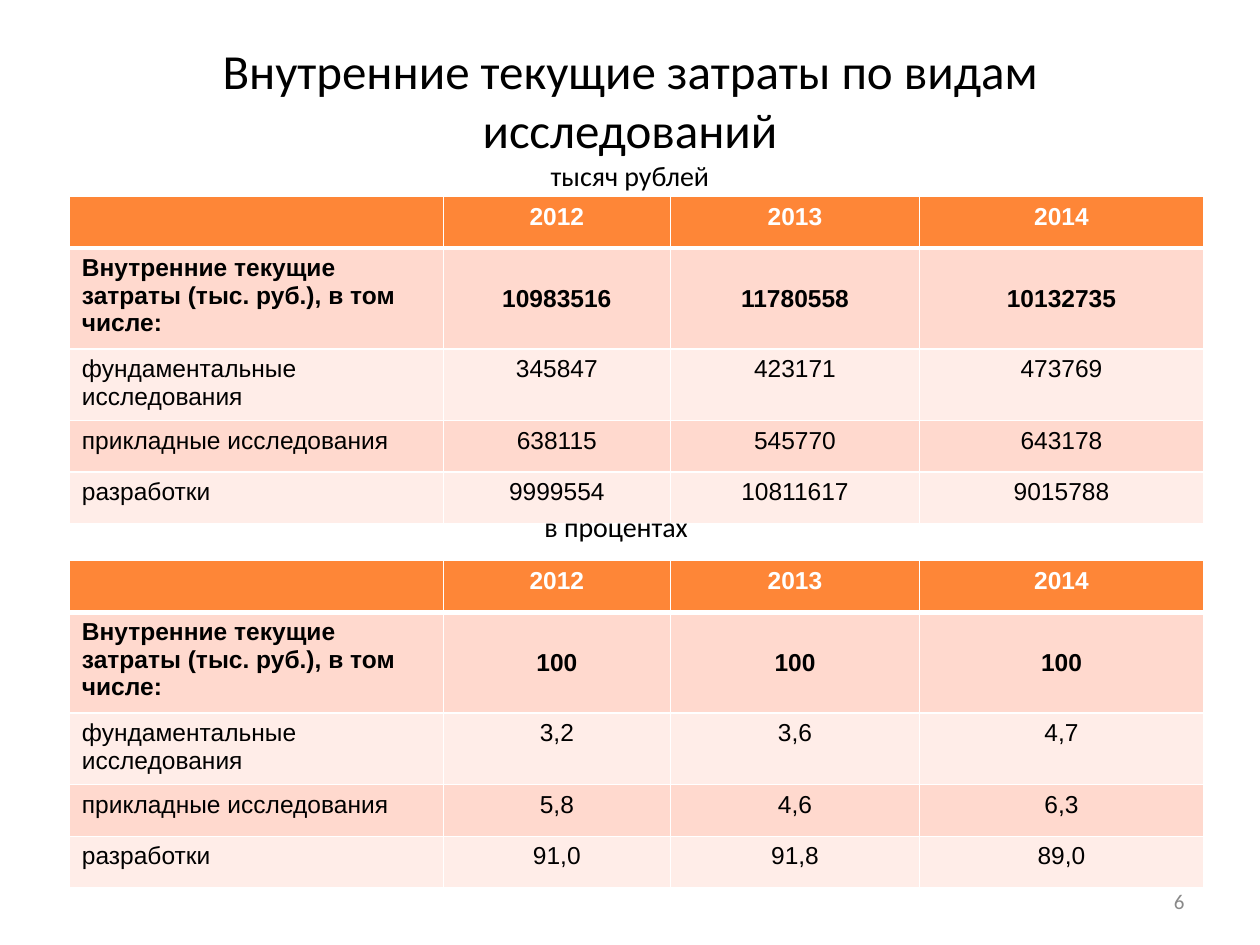
from dataclasses import dataclass

from lxml.etree import SubElement
from pptx import Presentation
from pptx.dml.color import RGBColor
from pptx.enum.text import MSO_ANCHOR as Anchor, PP_ALIGN as Align
from pptx.oxml.ns import qn
from pptx.util import Inches, Pt

# Slide grid: 100 columns by 75 rows of equal square units
COLUMNS, ROWS = 100, 75
SLIDE_WIDTH, SLIDE_HEIGHT = Inches(10), Inches(7.5)


@dataclass(frozen=True)
class Theme:
    heading_font: str = "Calibri"
    table_font: str = "Arial"
    title_size: int = 28
    caption_size: int = 16
    table_size: int = 14
    number_size: int = 12
    ink: str = "000000"
    muted: str = "898989"
    white: str = "FFFFFF"
    header: str = "FE8637"
    bands: tuple[str, str] = ("FFD9CE", "FFEDE8")
    thin: int = 1
    thick: int = 3


@dataclass(frozen=True)
class Area:
    left: float
    top: float
    width: float
    height: float

    def lengths(self) -> tuple[int, int, int, int]:
        return across(self.left), down(self.top), across(self.width), down(self.height)


@dataclass(frozen=True)
class CostTable:
    top: float
    values: tuple[tuple[str, ...], ...]


THEME = Theme()
TABLE_LEFT, ROW_HEIGHT = 5.5, 4.1
COLUMN_WIDTHS = (29.7, 18, 19.8, 22.5)
YEARS = ("", "2012", "2013", "2014")
LABELS = (
    "Внутренние текущие затраты (тыс. руб.), в том числе:",
    "фундаментальные исследования",
    "прикладные исследования",
    "разработки",
)
THOUSANDS = CostTable(15.6, (
    ("10983516", "11780558", "10132735"),
    ("345847", "423171", "473769"),
    ("638115", "545770", "643178"),
    ("9999554", "10811617", "9015788"),
))
PERCENTS = CostTable(44.5, (
    ("100", "100", "100"),
    ("3,2", "3,6", "4,7"),
    ("5,8", "4,6", "6,3"),
    ("91,0", "91,8", "89,0"),
))


def across(columns: float) -> int:
    return round(SLIDE_WIDTH * columns / COLUMNS)


def down(rows: float) -> int:
    return round(SLIDE_HEIGHT * rows / ROWS)


def write(para, text: str, *, size: int, font: str = THEME.heading_font,
          color: str = THEME.ink, bold: bool = False, align=Align.CENTER) -> None:
    para.alignment = align
    span = para.add_run()
    span.text = text
    span.font.name, span.font.size, span.font.bold = font, Pt(size), bold
    span.font.color.rgb = RGBColor.from_string(color)


def add_box(slide, area: Area):
    """Add a wrapping, vertically centred text box and return its paragraph."""
    frame = slide.shapes.add_textbox(*area.lengths()).text_frame
    frame.word_wrap = True
    frame.vertical_anchor = Anchor.MIDDLE
    return frame.paragraphs[0]


def set_borders(cell, top: int, bottom: int) -> None:
    properties = cell._tc.get_or_add_tcPr()
    for side, points in (("L", THEME.thin), ("R", THEME.thin), ("T", top), ("B", bottom)):
        line = SubElement(properties, qn(f"a:ln{side}"), w=str(Pt(points)))
        fill = SubElement(line, qn("a:solidFill"))
        SubElement(fill, qn("a:srgbClr"), val=THEME.white)


def add_cost_table(slide, costs: CostTable) -> None:
    rows = [YEARS] + [(label, *values) for label, values in zip(LABELS, costs.values)]
    area = Area(TABLE_LEFT, costs.top, sum(COLUMN_WIDTHS), ROW_HEIGHT * len(rows))
    table = slide.shapes.add_table(len(rows), len(YEARS), *area.lengths()).table
    for column, width in zip(table.columns, COLUMN_WIDTHS):
        column.width = across(width)

    for r, texts in enumerate(rows):
        is_header, is_total = r == 0, r == 1
        table.rows[r].height = down(ROW_HEIGHT)
        fill = THEME.header if is_header else THEME.bands[(r - 1) % 2]
        for c, text in enumerate(texts):
            cell = table.cell(r, c)
            set_borders(cell, top=THEME.thick if is_total else THEME.thin,
                        bottom=THEME.thick if is_header else THEME.thin)
            cell.fill.solid()
            cell.fill.fore_color.rgb = RGBColor.from_string(fill)
            if is_total and c:
                cell.vertical_anchor = Anchor.MIDDLE
            if text:
                write(cell.text_frame.paragraphs[0], text,
                      size=THEME.table_size, font=THEME.table_font,
                      color=THEME.white if is_header else THEME.ink,
                      bold=is_header or is_total,
                      align=Align.CENTER if c else Align.LEFT)


def main() -> None:
    deck = Presentation()
    deck.slide_width, deck.slide_height = SLIDE_WIDTH, SLIDE_HEIGHT
    slide = deck.slides.add_slide(deck.slide_layouts[6])

    # Title with the unit of the first table
    title = add_box(slide, Area(5, 3, 90, 12.5))
    write(title, "Внутренние текущие затраты по видам исследований", size=THEME.title_size)
    title.add_line_break()
    write(title, "тысяч рублей", size=THEME.caption_size)

    # Costs in thousands of roubles, then as percentages
    add_cost_table(slide, THOUSANDS)
    caption = add_box(slide, Area(3.9, 39.8, 90, 3.9))
    write(caption, "в процентах", size=THEME.caption_size)
    add_cost_table(slide, PERCENTS)

    # Slide number
    number = add_box(slide, Area(71.7, 69.5, 23.3, 4))
    write(number, "6", size=THEME.number_size, color=THEME.muted, align=Align.RIGHT)

    deck.save("out.pptx")


if __name__ == "__main__":
    main()
